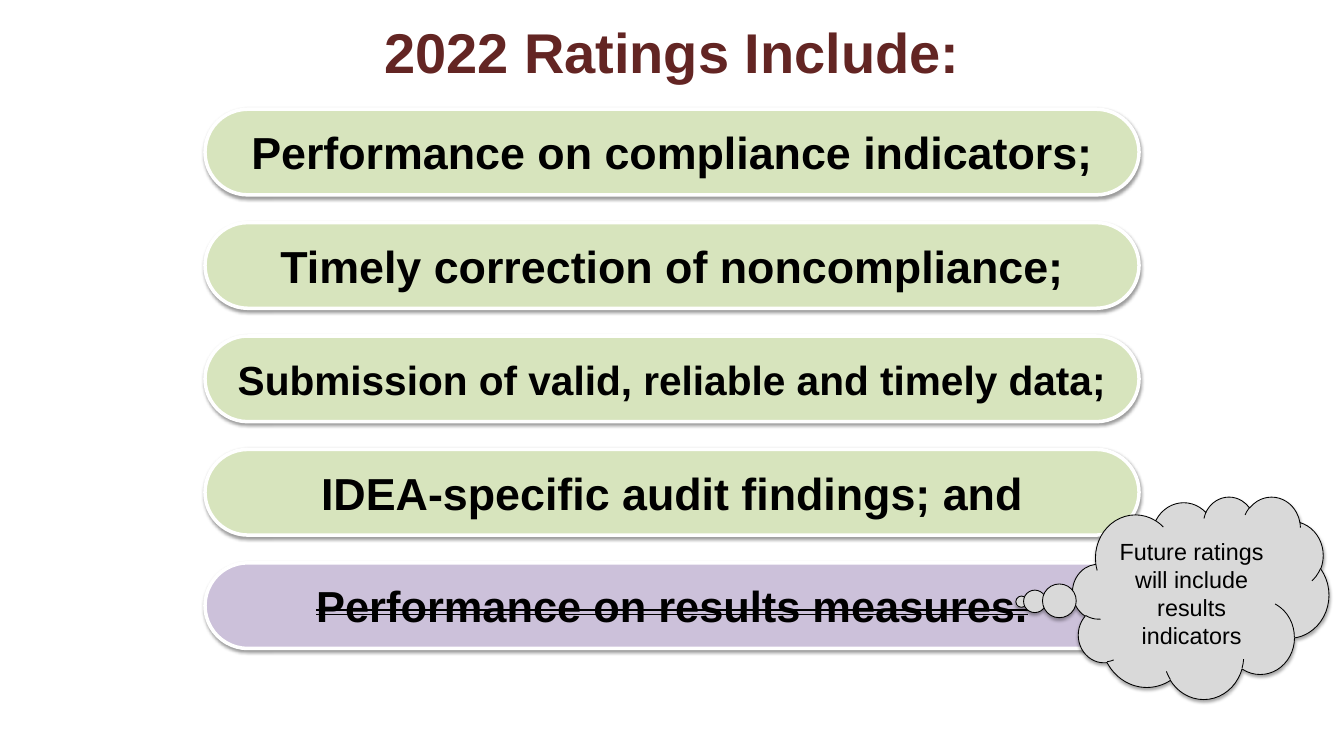
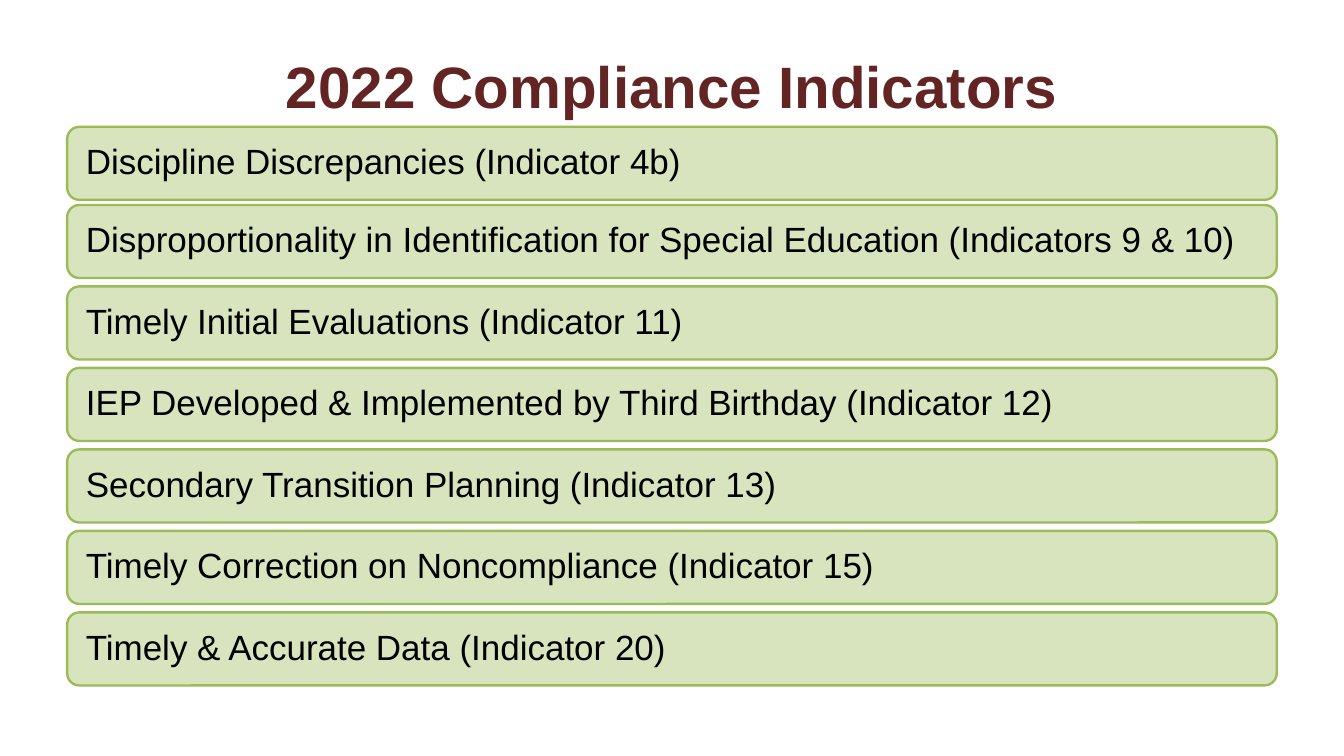
from lxml.etree import SubElement
from pptx import Presentation
from pptx.dml.color import RGBColor
from pptx.enum.shapes import MSO_SHAPE
from pptx.enum.text import MSO_ANCHOR, PP_ALIGN
from pptx.oxml.ns import qn
from pptx.util import Inches, Pt

FONT = "Arial"
COLORS = {
    "title": "632523",
    "text": "000000",
    "green": "D7E4BD",
    "edge": "9BBB59",
    "purple": "CCC1DA",
    "gray": "D9D9D9",
    "white": "FFFFFF",
}
RATINGS = [
    ("Performance on compliance indicators;", 38.4),
    ("Timely correction of noncompliance;", 38.4),
    ("Submission of valid, reliable and timely data;", 34.8),
    ("IDEA-specific audit findings; and", 38.4),
    ("Performance on results measures.", 37.2),
]
FIRST = "Discipline Discrepancies (Indicator 4b)"
OTHERS = [
    "Disproportionality in Identification for Special Education (Indicators 9 & 10)",
    "Timely Initial Evaluations (Indicator 11)",
    "IEP Developed & Implemented by Third Birthday (Indicator 12)",
    "Secondary Transition Planning (Indicator 13)",
    "Timely Correction on Noncompliance (Indicator 15)",
    "Timely & Accurate Data (Indicator 20)",
]


def color(name):
    return RGBColor.from_string(COLORS[name])


def place(shape, box):
    shape.left, shape.top, shape.width, shape.height = map(Inches, box)


def inset(frame, side, top):
    frame.margin_left = frame.margin_right = Inches(side)
    frame.margin_top = frame.margin_bottom = Inches(top)


def write(frame, text, size, align, ink="text", bold=False):
    """Fill the frame with one styled paragraph and return it."""
    frame.word_wrap = True
    frame.text = text
    para = frame.paragraphs[0]
    para.alignment = align
    font = para.runs[0].font
    font.name, font.size, font.bold = FONT, Pt(size), bold
    font.color.rgb = color(ink)
    return para


def add_slide(deck, title, box, size):
    slide = deck.slides.add_slide(deck.slide_layouts[5])
    head = slide.shapes.title
    place(head, box)
    frame = head.text_frame
    inset(frame, 0, 0)
    frame.vertical_anchor = MSO_ANCHOR.TOP
    write(frame, title, size, PP_ALIGN.CENTER, "title", True)
    return slide


def add_box(slide, kind, box, fill, line, width):
    shape = slide.shapes.add_shape(kind, *map(Inches, box))
    shape.fill.solid()
    shape.fill.fore_color.rgb = color(fill)
    shape.line.color.rgb = color(line)
    shape.line.width = Pt(width)
    shape.shadow.inherit = False
    shape.text_frame.vertical_anchor = MSO_ANCHOR.MIDDLE
    return shape


def add_shadow(shape, alpha, dist):
    effects = shape._element.spPr.find(qn("a:effectLst"))
    outer = SubElement(effects, qn("a:outerShdw"), blurRad=str(Pt(3.1)),
                       dist=str(Pt(dist)), dir="5400000", rotWithShape="0")
    tint = SubElement(outer, qn("a:srgbClr"), val=COLORS["text"])
    SubElement(tint, qn("a:alpha"), val=str(alpha * 1000))


def add_pills(slide, left, top, width, height, step):
    """Stack the ratings; the last one is purple and struck out."""
    for row, (text, size) in enumerate(RATINGS):
        last = row == len(RATINGS) - 1
        box = (left, top + row * step, width, height)
        pill = add_box(slide, MSO_SHAPE.ROUNDED_RECTANGLE, box,
                       "purple" if last else "green", "white", 3)
        pill.adjustments[0] = 0.5
        add_shadow(pill, 38, 1.6)
        inset(pill.text_frame, 0.12, 0.06)
        para = write(pill.text_frame, text, size, PP_ALIGN.CENTER, bold=True)
        if last:
            para.runs[0].font._element.set("strike", "dblStrike")


def add_cloud(slide, box):
    cloud = add_box(slide, MSO_SHAPE.CLOUD_CALLOUT, box, "gray", "text", 0.75)
    cloud.adjustments[0], cloud.adjustments[1] = -0.7, 0.02
    add_shadow(cloud, 35, 1.8)
    write(cloud.text_frame, "Future ratings will include results indicators",
          20, PP_ALIGN.CENTER)


def add_bar(slide, text, box):
    bar = add_box(slide, MSO_SHAPE.ROUNDED_RECTANGLE, box, "green", "edge", 2)
    inset(bar.text_frame, 0.18, 0.18)
    write(bar.text_frame, text, 30, PP_ALIGN.LEFT).line_spacing = 0.9


def add_bars(slide, left, top, width, height, step):
    for row, text in enumerate(OTHERS):
        add_bar(slide, text, (left, top + row * step, width, height))


def main():
    deck = Presentation()
    deck.slide_width, deck.slide_height = Inches(16), Inches(9)

    slide = add_slide(deck, "2022 Ratings Include:", (2.6, 0.21, 10.8, 0.81), 48)
    add_pills(slide, 2.44, 1.3, 11.12, 1.02, 1.35)
    add_cloud(slide, (12.77, 5.91, 3.05, 2.41))

    slide = add_slide(deck, "2022 Compliance Indicators", (0.8, 0.6, 14.4, 0.84), 50)
    add_bar(slide, FIRST, (0.8, 1.51, 14.4, 0.87))
    add_bars(slide, 0.8, 2.44, 14.4, 0.87, 0.97)

    deck.save("out.pptx")


if __name__ == "__main__":
    main()
